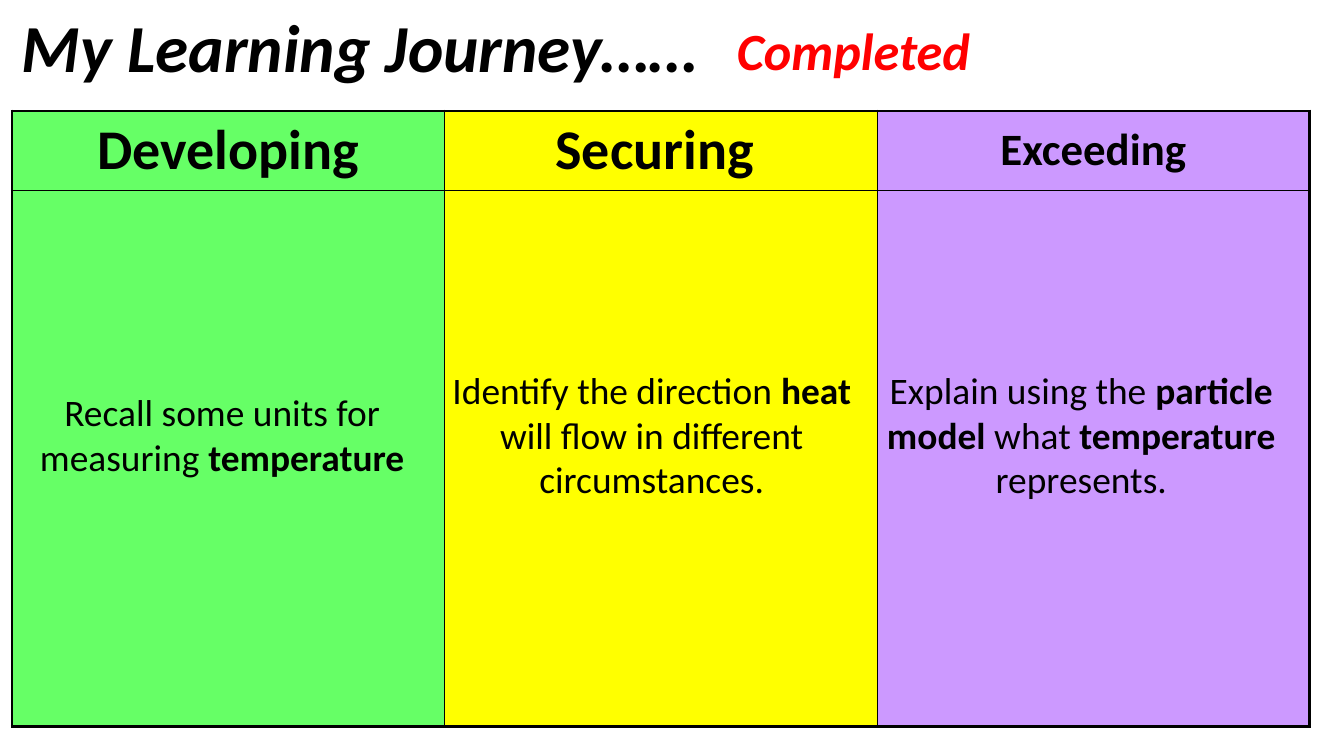
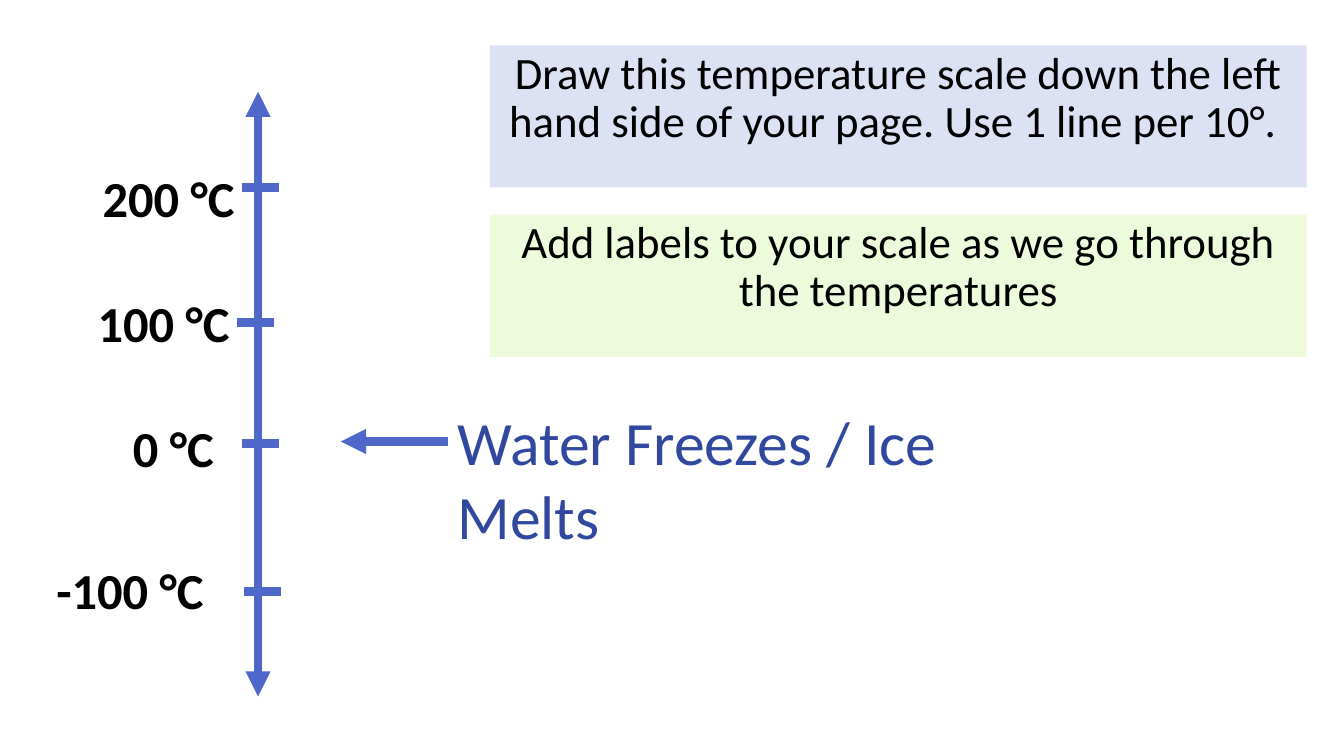
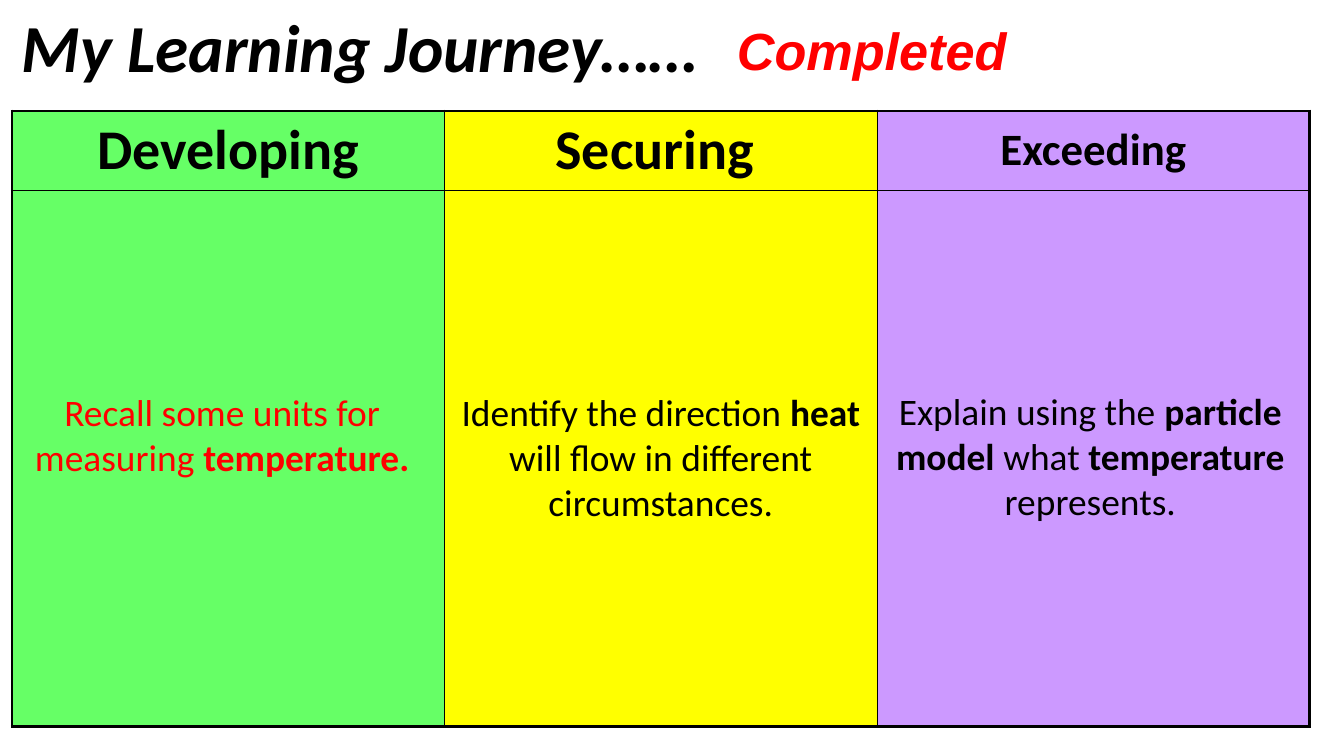
from collections import namedtuple
from dataclasses import dataclass

from lxml.etree import SubElement
from pptx import Presentation
from pptx.dml.color import RGBColor
from pptx.enum.shapes import MSO_CONNECTOR, MSO_SHAPE
from pptx.enum.text import MSO_ANCHOR, PP_ALIGN
from pptx.oxml.ns import qn
from pptx.util import Inches, Pt

Box = namedtuple("Box", "left top width height")
Level = namedtuple("Level", "name size fill")
Mark = namedtuple("Mark", "label label_left label_top label_width tick_left tick_top")


@dataclass(frozen=True)
class Theme:
    font: str = "Calibri"
    alternate_font: str = "Arial"
    ink: str = "000000"
    done: str = "FF0000"
    scale: str = "4E67C8"
    caption: str = "31489F"
    task_fill: str = "DCE1F4"
    label_fill: str = "EDFBDC"
    title_size: float = 48
    status_size: float = 37.3
    goal_size: float = 26.7
    task_size: float = 32
    mark_size: float = 36
    caption_size: float = 44
    scale_line: float = 6
    outer_border: float = 2.25
    inner_border: float = 1


THEME = Theme()
LEVELS = (
    Level("Developing", 40, "66FF66"),
    Level("Securing ", 40, "FFFF00"),
    Level("Exceeding", 32, "CC99FF"),
)
GOALS = (
    "Recall some units for measuring **temperature**",
    "Identify the direction **heat** will flow in different circumstances.",
    "Explain using the **particle model** what **temperature** represents.",
)
# Offsets from the top of the scale's axis
MARKS = (
    Mark("200 °C", -1.64, 0.70, 1.57, -0.16, 0.95),
    Mark("100 °C", -1.69, 1.94, 1.57, -0.21, 2.29),
    Mark("0 °C", -1.34, 3.18, 1.21, -0.16, 3.49),
    Mark("-100 °C", -2.10, 4.59, 1.89, -0.14, 4.96),
)


def inches(box):
    return [Inches(length) for length in box]


def write(frame, text, size, color=THEME.ink, font=THEME.font,
          bold=False, italic=False, align=PP_ALIGN.LEFT):
    """Fill a text frame; parts between ** marks are bold."""
    frame.word_wrap = True
    para = frame.paragraphs[0]
    para.alignment = align
    for index, part in enumerate(text.split("**")):
        if not part:
            continue
        span = para.add_run()
        span.text = part
        span.font.name = font
        span.font.size = Pt(size)
        span.font.bold = bold or index % 2 == 1
        span.font.italic = italic
        span.font.color.rgb = RGBColor.from_string(color)
    return para


def add_text(page, box, text, size, **style):
    label = page.shapes.add_textbox(*inches(box))
    write(label.text_frame, text, size, **style)
    return label


def add_scale_line(page, start, end, arrows=()):
    """Draw a scale-coloured line; arrows lists headEnd and/or tailEnd."""
    line = page.shapes.add_connector(
        MSO_CONNECTOR.STRAIGHT, *inches(start), *inches(end))
    line.line.color.rgb = RGBColor.from_string(THEME.scale)
    line.line.width = Pt(THEME.scale_line)
    for arrow in arrows:
        SubElement(line.line._get_or_add_ln(), qn("a:" + arrow), type="triangle")
    SubElement(line._element.spPr, qn("a:effectLst"))
    return line


def set_borders(cell, widths):
    properties = cell._tc.get_or_add_tcPr()
    for side, width in widths.items():
        border = SubElement(properties, qn("a:ln" + side), w=str(Pt(width)))
        fill = SubElement(border, qn("a:solidFill"))
        SubElement(fill, qn("a:srgbClr"), val=THEME.ink)


def add_level_table(page, box):
    heights = (0.79, box.height - 0.79)
    table = page.shapes.add_table(len(heights), len(LEVELS), *inches(box)).table
    table.first_row = table.horz_banding = False
    for row, height in zip(table.rows, heights):
        row.height = Inches(height)
    outer, inner = THEME.outer_border, THEME.inner_border
    last_row, last_column = len(heights) - 1, len(LEVELS) - 1
    for column, level in enumerate(LEVELS):
        table.columns[column].width = Inches(box.width / len(LEVELS))
        for row in range(len(heights)):
            cell = table.cell(row, column)
            set_borders(cell, {
                "L": outer if column == 0 else inner,
                "R": outer if column == last_column else inner,
                "T": outer if row == 0 else inner,
                "B": outer if row == last_row else inner,
            })
            cell.fill.solid()
            cell.fill.fore_color.rgb = RGBColor.from_string(level.fill)
        header = table.cell(0, column)
        header.vertical_anchor = MSO_ANCHOR.MIDDLE
        write(header.text_frame, level.name, level.size, bold=True,
              align=PP_ALIGN.CENTER)


def add_goals(page, box, goals, tops, shift, first_color):
    """Place one goal per level; shift moves every goal after the first."""
    for index, (goal, top) in enumerate(zip(goals, tops)):
        left = box.left + 4.26 * index + (shift if index else 0)
        add_text(page, Box(left, box.top + top, 4.17, 1.45), goal,
                 THEME.goal_size, align=PP_ALIGN.CENTER,
                 color=THEME.ink if index else first_color)


def add_journey_page(page, goals, tops, shift=0, first_color=THEME.ink,
                     status_font=THEME.font):
    add_text(page, Box(0.12, 0, 9.57, 1.85), "My Learning Journey……",
             THEME.title_size, bold=True, italic=True)
    table_box = Box(0.12, 1.1, 12.87, 6.11)
    add_level_table(page, table_box)
    add_goals(page, table_box, goals, tops, shift, first_color)
    add_text(page, Box(7.21, 0.13, 3.64, 0.73), "Completed", THEME.status_size,
             color=THEME.done, font=status_font, bold=True, italic=True)


def add_task(page, box, text, fill):
    panel = page.shapes.add_shape(MSO_SHAPE.RECTANGLE, *inches(box))
    panel.shadow.inherit = False
    panel.fill.solid()
    panel.fill.fore_color.rgb = RGBColor.from_string(fill)
    panel.line.fill.background()
    panel.text_frame.vertical_anchor = MSO_ANCHOR.TOP
    para = write(panel.text_frame, text, THEME.task_size, align=PP_ALIGN.CENTER)
    para.line_spacing = 0.9


def add_scale(page, box):
    axis = box.left + 2.1
    for mark in MARKS:
        add_text(page, Box(axis + mark.label_left, box.top + mark.label_top,
                           mark.label_width, 0.71),
                 mark.label, THEME.mark_size, bold=True)
        left, level = axis + mark.tick_left, box.top + mark.tick_top
        add_scale_line(page, (left, level), (left + 0.37, level))
    add_scale_line(page, (axis, box.top), (axis, box.top + box.height),
                   ("headEnd", "tailEnd"))


def add_callout(page, box, text):
    """Write a caption with an arrow pointing left from its side."""
    caption = add_text(page, box, text, THEME.caption_size, color=THEME.caption)
    middle = box.top + box.height / 2
    arrow = add_scale_line(page, (box.left, middle), (box.left - 1.06, middle),
                           ("tailEnd",))
    arrow.begin_connect(caption, 1)


def add_scale_page(page):
    tasks = (
        ("Draw this temperature scale down the left hand side of your page. "
         "Use 1 line per 10°. ", THEME.task_fill),
        ("Add labels to your scale as we go through the temperatures",
         THEME.label_fill),
    )
    for index, (text, fill) in enumerate(tasks):
        add_task(page, Box(4.86, 0.45 + 1.68 * index, 8.1, 1.41), text, fill)
    add_scale(page, Box(0.46, 0.91, 2.33, 6))
    add_callout(page, Box(4.44, 3.96, 6.4, 0.84), "Water Freezes / Ice Melts")


def main():
    deck = Presentation()
    deck.slide_width, deck.slide_height = Inches(13.33), Inches(7.5)
    start, scale, review = (
        deck.slides.add_slide(deck.slide_layouts[6]) for _ in range(3))
    add_journey_page(start, GOALS, tops=(2.71, 2.49, 2.49))
    add_scale_page(scale)
    reviewed = ("Recall some units for measuring **temperature.**",) + GOALS[1:]
    add_journey_page(review, reviewed, tops=(2.71, 2.71, 2.7), shift=0.09,
                     first_color=THEME.done, status_font=THEME.alternate_font)
    deck.save("out.pptx")


if __name__ == "__main__":
    main()
